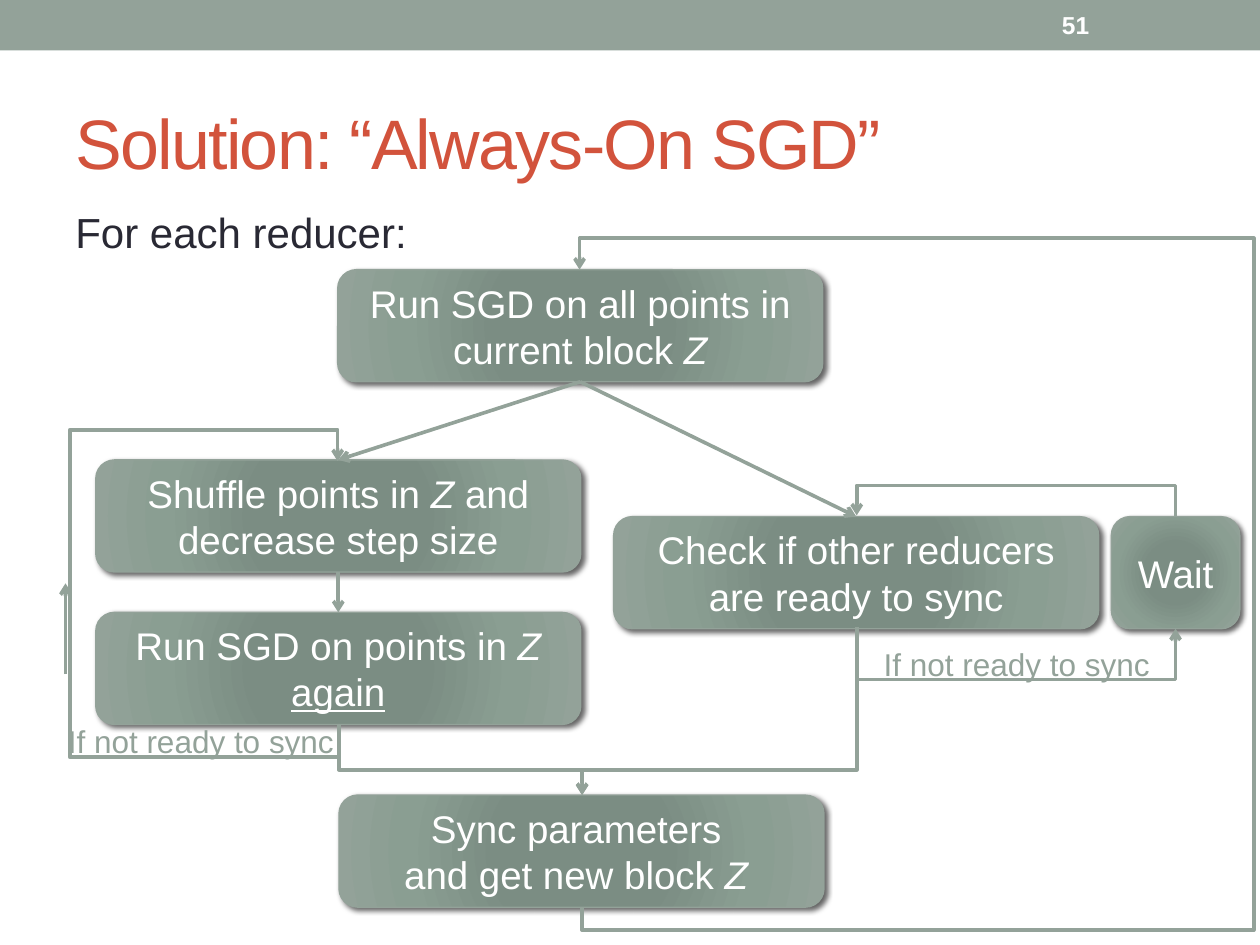
from typing import NamedTuple

from lxml import etree
from pptx import Presentation
from pptx import util as u
from pptx.dml.color import RGBColor
from pptx.enum import shapes, text
from pptx.oxml import parse_xml
from pptx.oxml.ns import nsdecls, qn

COLORS = {"sage": "93A299", "title": "D2533C", "ink": "292934",
          "white": "FFFFFF", "shadow": "000000"}
GRADIENT = {0: "7B8E82", 34: "7B8D83", 70: "8A9E92", 100: "93A299"}
FONT = "Arial"
BOX_W, BOX_H = 3.85, 0.89
TOP, BOTTOM = 0, 2


class Run(NamedTuple):
    text: str
    italic: bool = False
    underline: bool = False


class Step(NamedTuple):
    left: float
    top: float
    runs: list[Run]
    width: float = BOX_W


class Label(NamedTuple):
    text: str
    left: float
    top: float
    width: float
    height: float
    size: int
    color: str
    middle: bool = False
    centered: bool = False
    wrap: bool = True
    bold: bool = False
    spacing: int = 0


class Route(NamedTuple):
    """An elbow path that leaves vertically; turns alternate y, x, y."""
    start: tuple[float, float]
    end: tuple[float, float]
    turns: list[float]


Z = Run("Z", italic=True)
STEPS = {
    "first_pass": Step(2.68, 2.14, [Run("Run SGD on all points in current block "), Z]),
    "shuffle": Step(0.76, 3.65, [Run("Shuffle points in "), Z,
                                 Run(" and decrease step size")]),
    "check": Step(4.87, 4.1, [Run("Check if other reducers are ready to sync")]),
    "rerun": Step(0.76, 4.86, [Run("Run SGD on points in "), Run("Z ", italic=True),
                               Run("again", underline=True)]),
    "wait": Step(8.82, 4.1, [Run("Wait")], 1.02),
    "sync": Step(2.69, 6.31, [Run("Sync parameters "), Run("\n"),
                              Run("and get new block "), Run("Z ", italic=True)]),
}
LINKS = [("first_pass", "shuffle"), ("first_pass", "check"), ("shuffle", "rerun")]
ROUTES = [
    Route((2.69, 5.76), (2.68, 3.66), [6.01, 0.52, 3.41]),   # shuffle again
    Route((6.8, 4.98), (9.33, 4.99), [5.4]),                 # check to wait
    Route((9.33, 4.1), (6.8, 4.09), [3.85]),                 # wait to check
    Route((2.69, 5.75), (4.62, 6.31), [6.11]),               # rerun to sync
    Route((6.8, 4.99), (4.62, 6.31), [6.11]),                # check to sync
    Route((4.62, 7.21), (4.6, 2.14), [7.38, 9.93, 1.89]),    # next block
]
NOT_READY = "If not ready to sync"
LABELS = [
    Label("Solution: “Always-On SGD”", 0.5, 0.58, 9, 1.08, 40, "title",
          middle=True, spacing=-100),
    Label("For each reducer:", 0.5, 1.59, 9, 0.6, 24, "ink"),
    Label(NOT_READY, 0.44, 5.68, 2.33, 0.4, 18, "sage", wrap=False),
    Label(NOT_READY, 6.8, 5.07, 2.54, 0.4, 18, "sage", centered=True),
    Label("51", 8.33, 0.02, 1.17, 0.36, 14, "white", middle=True, bold=True),
]


def rgb(name: str) -> RGBColor:
    return RGBColor.from_string(COLORS[name])


def style_font(font, size: int, color: str) -> None:
    font.name, font.size = FONT, u.Pt(size)
    font.color.rgb = rgb(color)


def add_label(slide, label: Label) -> None:
    box = slide.shapes.add_textbox(*map(u.Inches, label[1:5]))
    frame = box.text_frame
    frame.word_wrap = label.wrap
    if label.middle:
        frame.vertical_anchor = text.MSO_ANCHOR.MIDDLE
    frame.text = label.text
    paragraph = frame.paragraphs[0]
    if label.centered:
        paragraph.alignment = text.PP_ALIGN.CENTER
    run = paragraph.runs[0]
    style_font(run.font, label.size, label.color)
    run.font.bold = label.bold
    if label.spacing:
        run.font._element.set("spc", str(label.spacing))


def add_step(slide, step: Step):
    box = slide.shapes.add_shape(
        shapes.MSO_SHAPE.FLOWCHART_ALTERNATE_PROCESS, u.Inches(step.left),
        u.Inches(step.top), u.Inches(step.width), u.Inches(BOX_H))
    box.line.color.rgb, box.line.width = rgb("sage"), u.Pt(0.75)

    # Radial gradient and soft drop shadow
    stops = "".join(f'<a:gs pos="{pos * 1000}"><a:srgbClr val="{color}"/></a:gs>'
                    for pos, color in GRADIENT.items())
    box._element.spPr.find(qn("a:prstGeom")).addnext(parse_xml(
        f'<a:gradFill {nsdecls("a")} rotWithShape="1"><a:gsLst>{stops}</a:gsLst>'
        '<a:path path="circle"><a:fillToRect l="100000" t="100000" r="100000" '
        'b="100000"/></a:path></a:gradFill>'))
    box._element.spPr.append(parse_xml(
        f'<a:effectLst {nsdecls("a")}><a:outerShdw blurRad="{u.Pt(3)}" '
        f'dist="{u.Pt(2)}" dir="2700000" rotWithShape="0">'
        f'<a:srgbClr val="{COLORS["shadow"]}"><a:alpha val="60000"/></a:srgbClr>'
        '</a:outerShdw></a:effectLst>'))

    box.text_frame.word_wrap = True
    box.text_frame.vertical_anchor = text.MSO_ANCHOR.MIDDLE
    paragraph = box.text_frame.paragraphs[0]
    paragraph.alignment = text.PP_ALIGN.CENTER
    for part in step.runs:
        if part.text == "\n":
            paragraph.add_line_break()
            continue
        run = paragraph.add_run()
        run.text = part.text
        style_font(run.font, 22, "white")
        run.font.italic, run.font.underline = part.italic, part.underline
    return box


def add_arrow(slide, kind, start: tuple[float, float], end: tuple[float, float]):
    arrow = slide.shapes.add_connector(kind, *map(u.Inches, (*start, *end)))
    arrow.line.color.rgb, arrow.line.width = rgb("sage"), u.Pt(2.08)
    etree.SubElement(arrow.line._get_or_add_ln(), qn("a:tailEnd"), type="arrow")
    etree.SubElement(arrow._element.spPr, qn("a:effectLst"))
    return arrow


def add_route(slide, route: Route) -> None:
    arrow = add_arrow(slide, shapes.MSO_CONNECTOR.ELBOW, route.start, route.end)
    (x0, y0), (x1, y1) = route.start, route.end
    dx, dy = x1 - x0, y1 - y0

    # The preset leaves sideways, so turn it a quarter about its centre
    arrow.width, arrow.height = u.Inches(abs(dy)), u.Inches(abs(dx))
    arrow.left = u.Inches((x0 + x1 - abs(dy)) / 2)
    arrow.top = u.Inches((y0 + y1 - abs(dx)) / 2)
    xfrm = arrow._element.spPr.find(qn("a:xfrm"))
    xfrm.set("rot", str((90 if dx < 0 else 270) * 60000))
    xfrm.set("flipH", str(int((dx < 0) == (dy < 0))))
    xfrm.set("flipV", "0")

    geometry = arrow._element.spPr.find(qn("a:prstGeom"))
    geometry.set("prst", f"bentConnector{len(route.turns) + 2}")
    guides = geometry.find(qn("a:avLst"))
    if guides is None:
        guides = etree.SubElement(geometry, qn("a:avLst"))
    for i, turn in enumerate(route.turns):
        share = (turn - x0) / dx if i % 2 else (turn - y0) / dy
        etree.SubElement(guides, qn("a:gd"), name=f"adj{i + 1}",
                         fmla=f"val {round(share * 100000)}")


def main() -> None:
    deck = Presentation()
    deck.slide_width, deck.slide_height = u.Inches(10), u.Inches(7.5)
    slide = deck.slides.add_slide(deck.slide_layouts[6])

    # Header band
    band = slide.shapes.add_shape(shapes.MSO_SHAPE.RECTANGLE, 0, 0,
                                  deck.slide_width, u.Inches(0.4))
    band.shadow.inherit = False
    band.fill.solid()
    band.fill.fore_color.rgb = rgb("sage")
    band.line.fill.background()

    # Flow chart
    boxes = {name: add_step(slide, step) for name, step in STEPS.items()}
    for source, target in LINKS:
        link = add_arrow(slide, shapes.MSO_CONNECTOR.STRAIGHT, (0, 0), (1, 1))
        link.begin_connect(boxes[source], BOTTOM)
        link.end_connect(boxes[target], TOP)
    for route in ROUTES:
        add_route(slide, route)
    add_arrow(slide, shapes.MSO_CONNECTOR.STRAIGHT, (0.52, 5.35), (0.52, 4.63))

    # Title, lead-in, branch labels and page number
    for label in LABELS:
        add_label(slide, label)
    deck.save("out.pptx")


if __name__ == "__main__":
    main()
